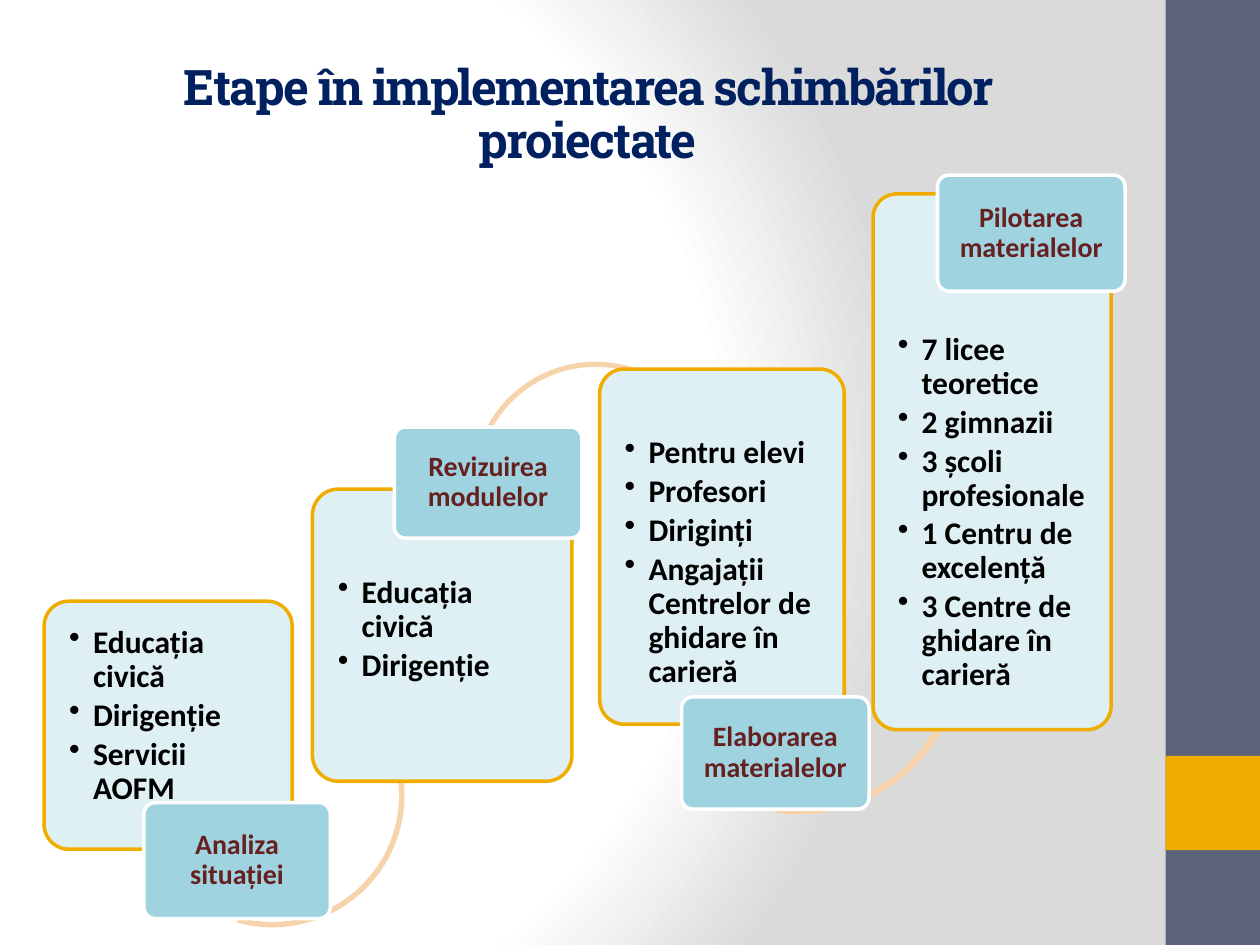
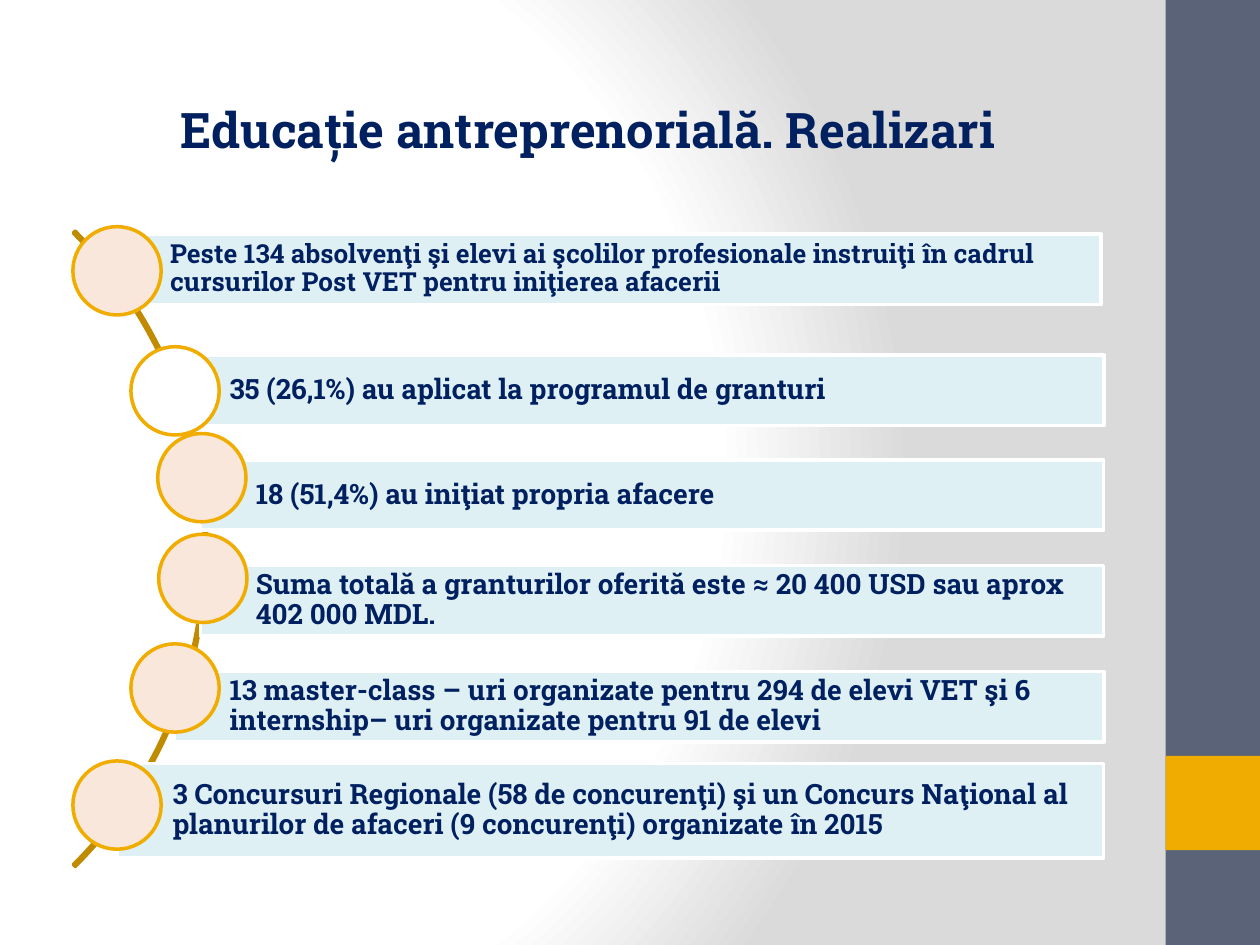
"""Build two slides on project stages and entrepreneurship results."""
from dataclasses import dataclass
from typing import Optional

from pptx import Presentation, oxml
from pptx import util as u
from pptx.dml.color import RGBColor
from pptx.enum import shapes, text
from pptx.oxml import ns

COLORS = {
    "white": "FFFFFF", "backdrop": "DADADA", "sidebar": "5A6378", "gold": "F0AD00",
    "dark_gold": "C08B00", "navy": "002060", "black": "000000", "maroon": "672020",
    "pale_blue": "DFF0F5", "blue": "A0D3E0", "peach": "F6D3AB", "pale_peach": "FAE7DC",
}
HEADING_FONT, BODY_FONT = "Roboto Slab", "Calibri"
OUTLINE = u.Pt(2)
KIND = shapes.MSO_SHAPE
MIDDLE = text.MSO_ANCHOR.MIDDLE
CENTER = text.PP_ALIGN.CENTER
CIRCLE_SIZE = 1.78


@dataclass(frozen=True)
class Box:
    """Position and size in centimetres."""
    left: float
    top: float
    width: float
    height: float


@dataclass(frozen=True)
class Style:
    """Look of a block of text."""
    font: str
    size: float
    color: str
    centered: bool = False
    space_after: float = 0
    bulleted: bool = False
    tracking: int = 0


@dataclass(frozen=True)
class Arc:
    """Curved link between two stages."""
    kind: shapes.MSO_SHAPE
    box: Box
    adjustments: tuple[float, ...]


@dataclass(frozen=True)
class Stage:
    """Card with bullets, its label and the link to the next stage."""
    card: Box
    top_margin: float
    items: tuple[str, ...]
    label_box: Box
    label: str
    arc: Optional[Arc] = None


@dataclass(frozen=True)
class Result:
    """Band of text with a circle at its left end."""
    band: Box
    circle_left: float
    circle_top: float
    message: str
    circle_color: str = "pale_peach"
    size: float = 16


CARD_STYLE = Style(BODY_FONT, 18, "black", space_after=2.7, bulleted=True)
LABEL_STYLE = Style(BODY_FONT, 16, "maroon", centered=True)

STAGES = (
    Stage(Box(0.89, 12.12, 5, 5), 0.36, ("Educația civică", "Dirigenție", "Servicii AOFM"),
          Box(2.9, 16.18, 3.76, 2.34), "Analiza situației",
          Arc(KIND.LEFT_CIRCULAR_ARROW, Box(2.77, 13.31, 5.44, 5.44),
              (0.02, 2.44, 209.25, 63.3, 0.02))),
    Stage(Box(6.3, 9.86, 5.23, 5.89), 1.6, ("Educația civică", "Dirigenție"),
          Box(7.95, 8.61, 3.78, 2.24), "Revizuirea modulelor",
          Arc(KIND.CIRCULAR_ARROW, Box(9.42, 7.19, 5.18, 5.18),
              (0.02, 2.57, 194.61, 124.69, 0.03))),
    Stage(Box(12.09, 7.44, 4.93, 7.16), 1.22,
          ("Pentru elevi", "Profesori", "Diriginți", "Angajații Centrelor de ghidare în carieră"),
          Box(13.74, 14.05, 3.78, 2.26), "Elaborarea materialelor",
          Arc(KIND.LEFT_CIRCULAR_ARROW, Box(12.75, 9.78, 6.71, 6.71),
              (0.02, 1.96, 204.5, 59.03, 0.02))),
    Stage(Box(17.6, 3.91, 4.8, 10.8), 2.67,
          ("7 licee teoretice", "2 gimnazii", "3 școli profesionale",
           "1 Centru de excelență", "3 Centre de ghidare în carieră"),
          Box(18.9, 3.53, 3.78, 2.34), "Pilotarea materialelor"),
)

RESULTS = (
    Result(Box(2.31, 4.72, 19.89, 1.42), 1.47, 4.57,
           "Peste 134 absolvenţi şi elevi ai şcolilor profesionale instruiţi în cadrul "
           "cursurilor Post VET pentru iniţierea afacerii", size=15),
    Result(Box(3.51, 7.16, 18.75, 1.42), 2.64, 6.99,
           "35 (26,1%) au aplicat la programul de granturi", "white"),
    Result(Box(4.04, 9.27, 18.21, 1.42), 3.18, 8.74,
           "18 (51,4%) au iniţiat propria afacere"),
    Result(Box(4.04, 11.4, 18.21, 1.42), 3.2, 10.77,
           "Suma totală a granturilor oferită este ≈ 20 400 USD sau aprox 402 000 MDL."),
    Result(Box(3.51, 13.54, 18.75, 1.42), 2.64, 12.98,
           "13 master-class – uri organizate pentru 294 de elevi VET şi 6 internship– uri "
           "organizate pentru 91 de elevi"),
    Result(Box(2.36, 15.39, 19.89, 1.91), 1.47, 15.34,
           "3 Concursuri Regionale (58 de concurenţi) şi un Concurs Naţional al planurilor "
           "de afaceri (9 concurenţi) organizate în 2015"),
)


def rgb(name: str) -> RGBColor:
    """Look up a colour by name."""
    return RGBColor.from_string(COLORS[name])


def lengths(box: Box) -> tuple[u.Length, ...]:
    """Convert a box to slide lengths."""
    return u.Cm(box.left), u.Cm(box.top), u.Cm(box.width), u.Cm(box.height)


def add_shape(slide, kind: shapes.MSO_SHAPE, box: Box, fill: Optional[str] = None,
              line: Optional[str] = None, adjustments: tuple[float, ...] = ()):
    """Add a flat preset shape."""
    shape = slide.shapes.add_shape(kind, *lengths(box))
    shape.shadow.inherit = False
    if fill:
        shape.fill.solid()
        shape.fill.fore_color.rgb = rgb(fill)
    else:
        shape.fill.background()
    if line:
        shape.line.color.rgb = rgb(line)
        shape.line.width = OUTLINE
    else:
        shape.line.fill.background()
    for index, value in enumerate(adjustments):
        shape.adjustments[index] = value
    return shape


def add_bullet(paragraph) -> None:
    """Give a paragraph a hanging bullet."""
    properties = paragraph._p.get_or_add_pPr()
    indent = u.Cm(0.48)
    properties.set("marL", str(indent))
    properties.set("indent", str(-indent))
    properties.append(oxml.parse_xml(f'<a:buChar {ns.nsdecls("a")} char="•"/>'))


def write(shape, content: str, style: Style, anchor: text.MSO_ANCHOR = MIDDLE,
          margins: tuple[float, float, float, float] = (0.25, 0.13, 0.25, 0.13)) -> None:
    """Fill a shape with styled text, one paragraph per line."""
    frame = shape.text_frame
    frame.word_wrap = True
    frame.vertical_anchor = anchor
    (frame.margin_left, frame.margin_top,
     frame.margin_right, frame.margin_bottom) = map(u.Cm, margins)
    frame.text = content
    for paragraph in frame.paragraphs:
        if style.bulleted:
            add_bullet(paragraph)
        paragraph.alignment = CENTER if style.centered else text.PP_ALIGN.LEFT
        paragraph.line_spacing = 0.9
        paragraph.space_after = u.Pt(style.space_after)
        for run in paragraph.runs:
            run.font.name = style.font
            run.font.size = u.Pt(style.size)
            run.font.bold = True
            run.font.color.rgb = rgb(style.color)
            if style.tracking:
                run._r.get_or_add_rPr().set("spc", str(style.tracking))


def set_background(slide) -> None:
    """Apply the circular gradient backdrop."""
    slide.background.fill.gradient()
    gradient = slide.element.xpath(".//p:bgPr/a:gradFill")[0]
    stops = "".join(
        f'<a:gs pos="{position}000"><a:srgbClr val="{COLORS[name]}"/></a:gs>'
        for position, name in ((0, "white"), (75, "white"), (100, "backdrop")))
    gradient.getparent().replace(gradient, oxml.parse_xml(
        f'<a:gradFill {ns.nsdecls("a")} rotWithShape="1"><a:gsLst>{stops}</a:gsLst>'
        '<a:path path="circle"><a:fillToRect l="20000" t="50000" r="100000" b="50000"/>'
        '</a:path></a:gradFill>'))


def add_slide(presentation, title: str, title_height: float, tracking: int = 0):
    """Add a slide with the shared backdrop, sidebar and title."""
    slide = presentation.slides.add_slide(presentation.slide_layouts[6])
    set_background(slide)
    add_shape(slide, KIND.RECTANGLE, Box(23.5, 0, 1.9, 19.05), "sidebar")
    add_shape(slide, KIND.RECTANGLE, Box(23.5, 15.24, 1.9, 1.9), "gold")
    title_box = slide.shapes.add_textbox(*lengths(Box(1.27, 0.76, 21.16, title_height)))
    write(title_box, title, Style(HEADING_FONT, 28, "navy", centered=True, tracking=tracking))
    return slide


def add_stage(slide, stage: Stage) -> None:
    """Draw a card, its outgoing arc and its label."""
    card = add_shape(slide, KIND.ROUNDED_RECTANGLE, stage.card, "pale_blue", "gold", (0.1,))
    write(card, "\n".join(stage.items), CARD_STYLE, text.MSO_ANCHOR.TOP,
          (0.36, stage.top_margin, 0.36, 0.36))
    if stage.arc:
        add_shape(slide, stage.arc.kind, stage.arc.box, "peach",
                  adjustments=stage.arc.adjustments)
    label = add_shape(slide, KIND.ROUNDED_RECTANGLE, stage.label_box, "blue", "white", (0.1,))
    write(label, stage.label, LABEL_STYLE, margins=(0.08, 0.05, 0.08, 0.05))


def add_result(slide, result: Result) -> None:
    """Draw a band of text and its circle."""
    band = add_shape(slide, KIND.RECTANGLE, result.band, "pale_blue", "white")
    write(band, result.message, Style(HEADING_FONT, result.size, "navy"),
          margins=(1.12, 0.1, 0.1, 0.1))
    circle = Box(result.circle_left, result.circle_top, CIRCLE_SIZE, CIRCLE_SIZE)
    add_shape(slide, KIND.OVAL, circle, result.circle_color, "gold")


def main() -> None:
    """Build and save the presentation."""
    presentation = Presentation()
    presentation.slide_width, presentation.slide_height = u.Cm(25.4), u.Cm(19.05)

    stages_slide = add_slide(presentation, "Etape în implementarea schimbărilor proiectate",
                             3.18, tracking=-100)
    for stage in STAGES:
        add_stage(stages_slide, stage)

    results_slide = add_slide(presentation, "Educație antreprenorială. Realizari", 3.81)
    add_shape(results_slide, KIND.BLOCK_ARC, Box(-13.94, 2.01, 18.11, 18.11),
              line="dark_gold", adjustments=(189, 27, 0.003))
    for result in RESULTS:
        add_result(results_slide, result)

    presentation.save("out.pptx")


if __name__ == "__main__":
    main()
